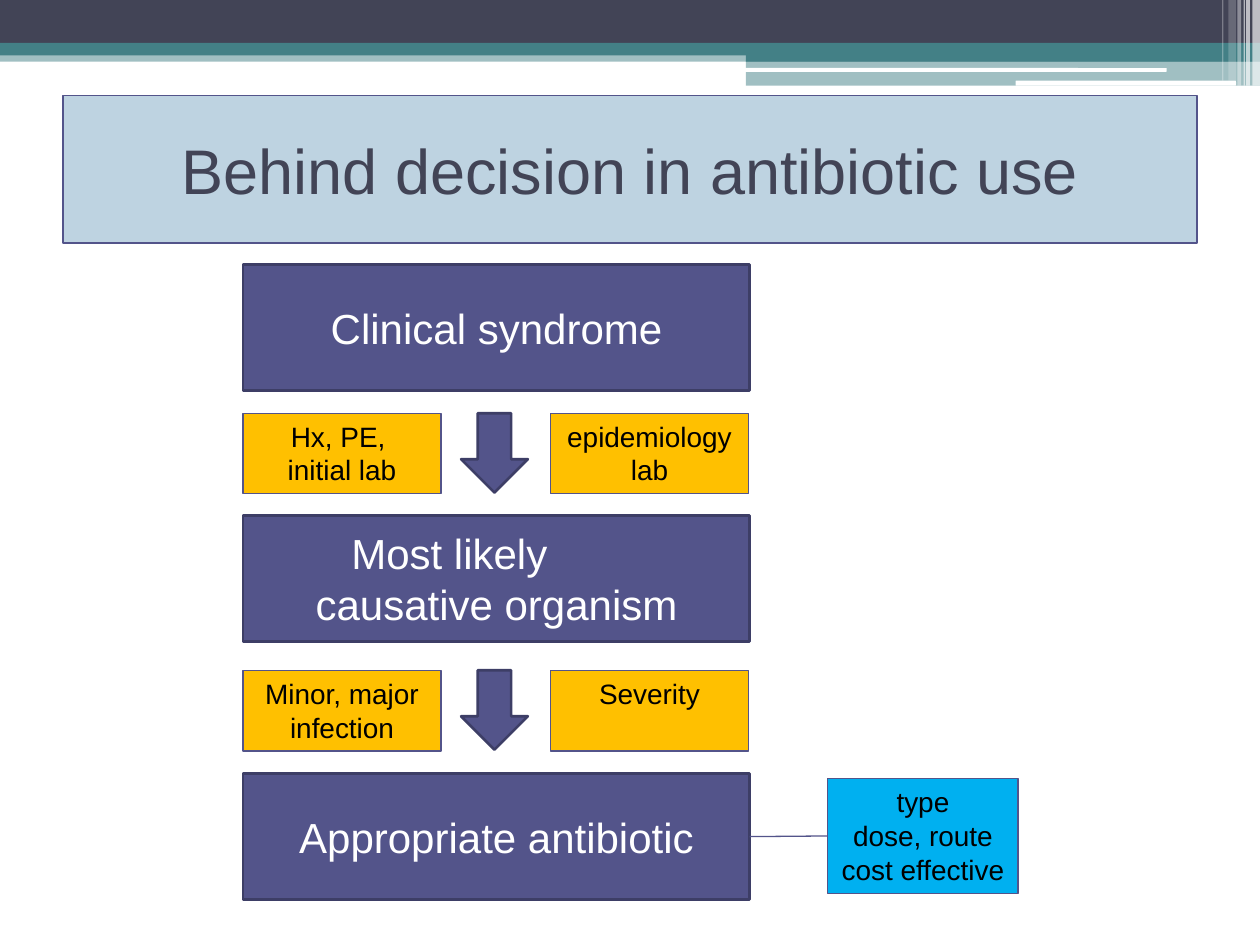
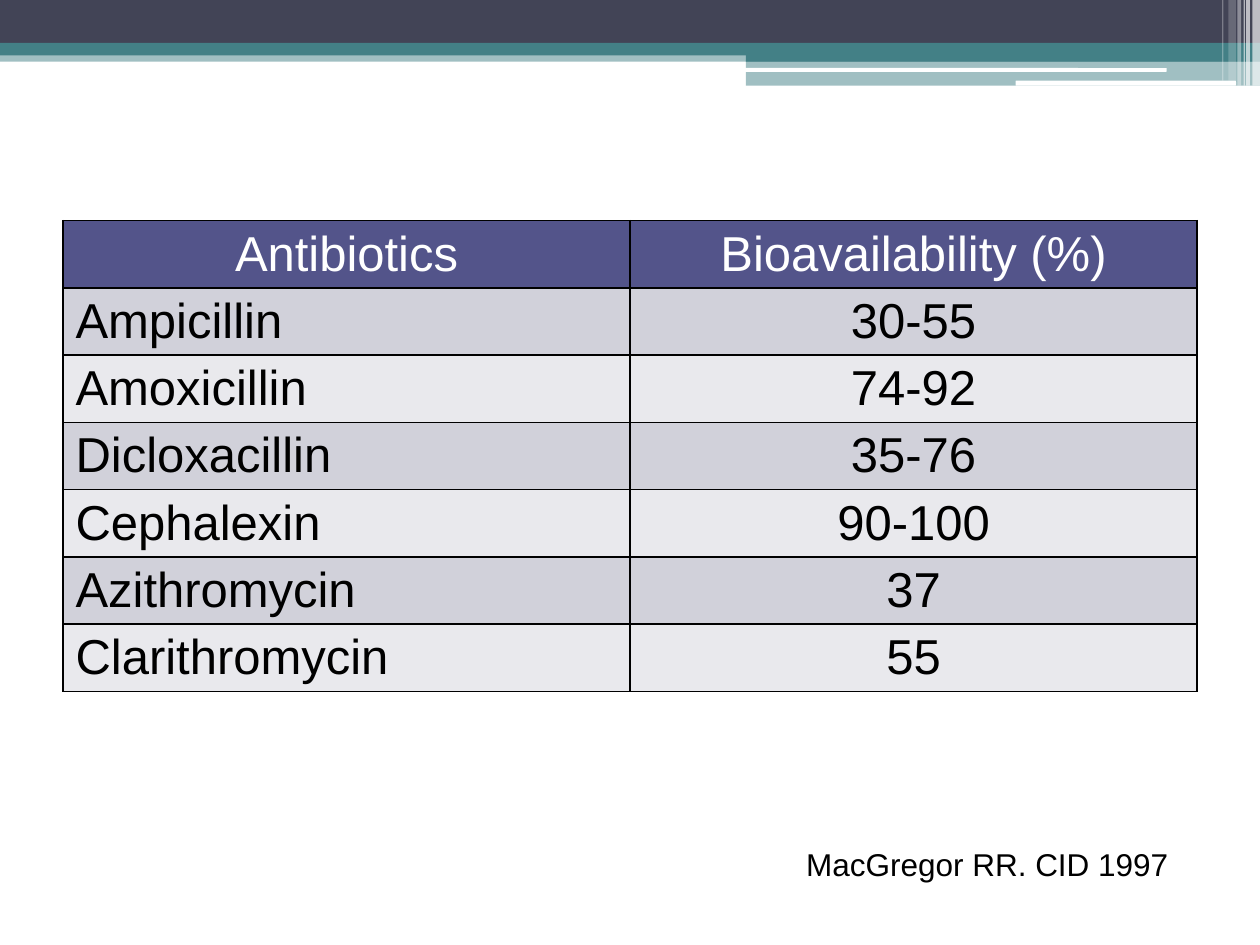
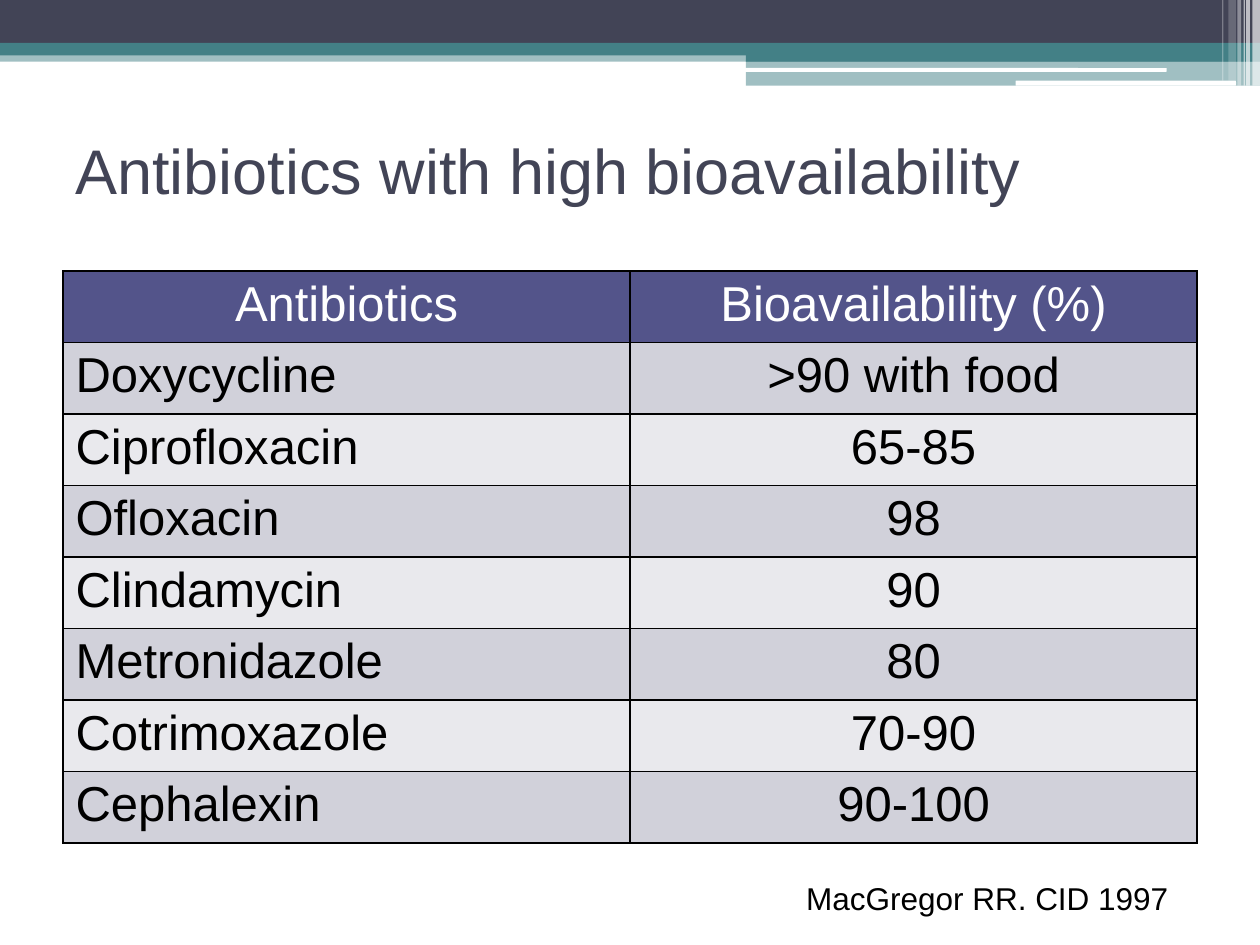
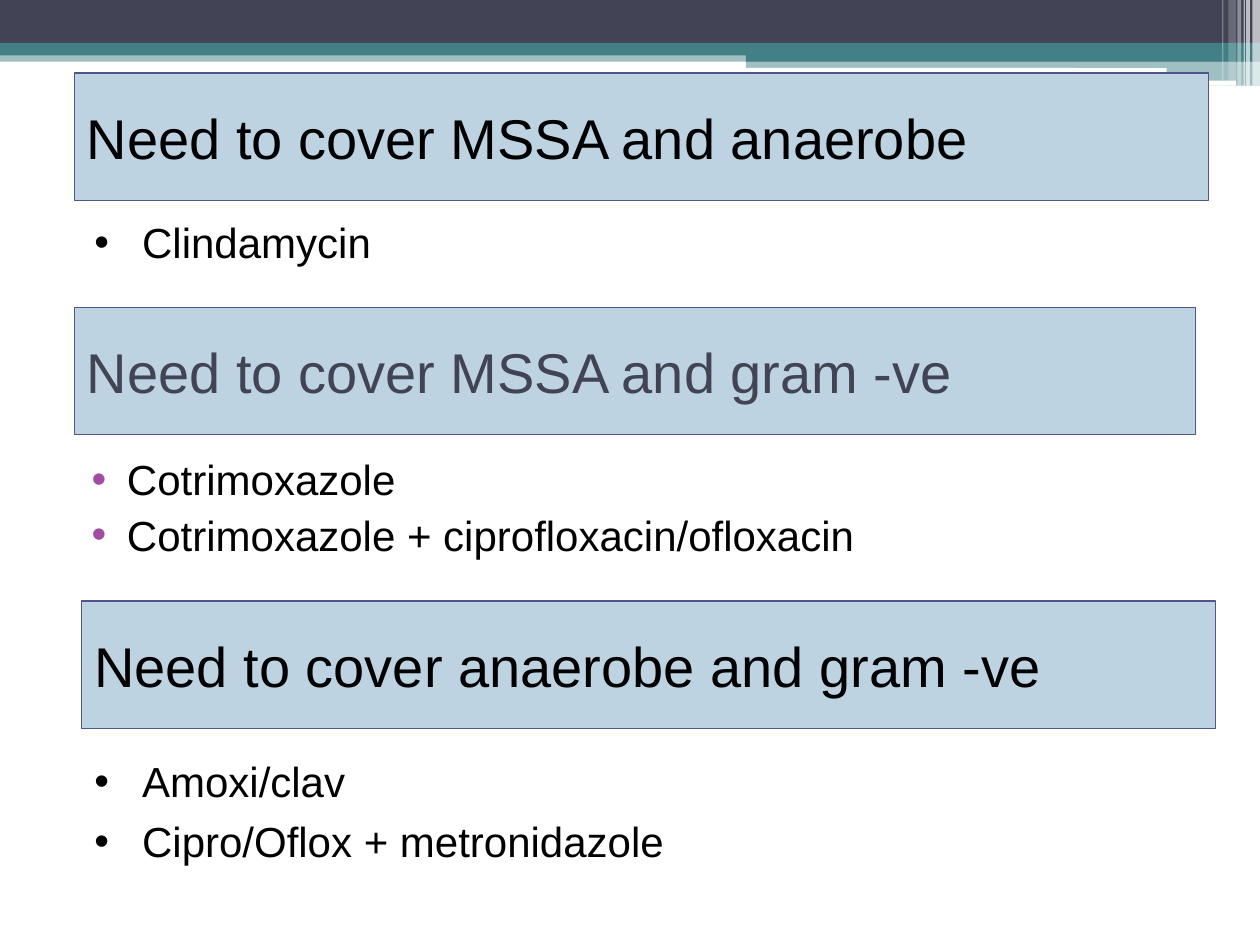
from dataclasses import dataclass

from lxml.etree import SubElement
from pptx import Presentation
from pptx.dml.color import RGBColor
from pptx.enum.shapes import MSO_CONNECTOR, MSO_SHAPE
from pptx.enum.text import MSO_ANCHOR, MSO_AUTO_SIZE, PP_ALIGN
from pptx.oxml.ns import qn
from pptx.util import Inches, Pt


@dataclass(frozen=True)
class Theme:
    font: str = "Arial"
    dark: str = "424456"
    teal: str = "438086"
    indigo: str = "53548A"
    indigo_edge: str = "3D3E66"
    panel: str = "BED3E1"
    amber: str = "FFC000"
    sky: str = "00B0F0"
    purple: str = "A04DA3"
    white: str = "FFFFFF"
    black: str = "000000"
    row_fills: tuple = ("D1D1DA", "E9E9ED")
    title: int = 36
    heading: int = 32
    table: int = 28
    body: int = 24
    source: int = 18
    note: int = 16


T = Theme()
RECT = MSO_SHAPE.RECTANGLE
ROUND = MSO_SHAPE.ROUNDED_RECTANGLE
LEFT, CENTER = PP_ALIGN.LEFT, PP_ALIGN.CENTER
TITLE_BOX = (0.5, 0.76, 9, 1.17)

BAND = [
    (RECT, (0, 0.4, 10, 0.09), T.teal, 50),
    (RECT, (0, 0, 10, 0.34), T.dark, 100),
    (RECT, (0, 0.34, 10, 0.1), T.teal, 100),
    (RECT, (5.92, 0.39, 4.08, 0.1), T.teal, 100),
    (RECT, (5.92, 0.48, 4.08, 0.2), T.teal, 50),
    (ROUND, (5.91, 0.54, 3.35, 0.03), T.white, 100),
    (ROUND, (8.06, 0.64, 1.75, 0.04), T.white, 100),
]
STRIPES = [
    (9.94, 0.06, 0.68, 65),
    (9.89, 0.03, 0.68, 65),
    (9.87, 0.01, 0.68, 60),
    (9.82, 0.03, 0.68, 40),
    (9.75, 0.06, 0.64, 20),
    (9.7, 0.01, 0.64, 30),
]


def rgb(color):
    return RGBColor.from_string(color)


def inches(box):
    return [Inches(v) for v in box]


def add_box(s, box, fill, line=None, width=0.75, kind=RECT, alpha=100):
    sp = s.shapes.add_shape(kind, *inches(box))
    sp.shadow.inherit = False
    sp.fill.solid()
    sp.fill.fore_color.rgb = rgb(fill)
    if alpha < 100:
        clr = sp.fill._xPr.find(qn("a:solidFill"))[0]
        SubElement(clr, qn("a:alpha"), val=str(alpha * 1000))
    if line:
        sp.line.color.rgb = rgb(line)
        sp.line.width = Pt(width)
    else:
        sp.line.fill.background()
    return sp


def write(tf, lines, size, color, align=LEFT, anchor=MSO_ANCHOR.TOP, wrap=True):
    tf.word_wrap = wrap
    tf.vertical_anchor = anchor
    if not wrap:
        tf.auto_size = MSO_AUTO_SIZE.SHAPE_TO_FIT_TEXT
    for i, line in enumerate(lines):
        p = tf.add_paragraph() if i else tf.paragraphs[0]
        write_line(p, line, size, color, align)


def write_line(p, line, size, color, align):
    p.alignment = align
    r = p.add_run()
    r.text = line
    r.font.name = T.font
    r.font.size = Pt(size)
    r.font.color.rgb = rgb(color)


def add_text(s, box, lines, size, color, **style):
    sp = s.shapes.add_textbox(*inches(box))
    write(sp.text_frame, lines, size, color, **style)
    return sp


def add_panel(s, box, text, size, color, align=LEFT):
    sp = add_box(s, box, T.panel, T.indigo)
    write(sp.text_frame, [text], size, color, align, MSO_ANCHOR.MIDDLE)


def add_step(s, top, lines):
    sp = add_box(s, (1.93, top, 4.02, 1), T.indigo, T.indigo_edge, 1.5)
    write(sp.text_frame, lines, T.body, T.white, CENTER, MSO_ANCHOR.MIDDLE)
    return sp


def add_conditions(s, top, left_lines, right_lines):
    add_box(s, (3.66, top, 0.53, 0.63), T.indigo, T.indigo_edge, 1.5,
            MSO_SHAPE.DOWN_ARROW)
    for left, lines in ((1.93, left_lines), (4.37, right_lines)):
        sp = add_box(s, (left, top, 1.57, 0.64), T.amber, T.indigo)
        write(sp.text_frame, lines, T.note, T.black, CENTER)


def join(s, start, end):
    cx = s.shapes.add_connector(MSO_CONNECTOR.STRAIGHT, 0, 0, 0, 0)
    cx.begin_connect(start, 3)
    cx.end_connect(end, 1)
    cx.line.color.rgb = rgb(T.indigo)
    cx.line.width = Pt(0.75)
    SubElement(cx._element.spPr, qn("a:effectLst"))


def add_bullets(s, box, lines, margin=0.38, indent=-0.38, before=5.5, bullet=None):
    sp = add_text(s, box, lines, T.body, T.black)
    for p in sp.text_frame.paragraphs:
        p.space_before = Pt(before)
        pPr = p._p.get_or_add_pPr()
        pPr.set("marL", str(Inches(margin)))
        pPr.set("indent", str(Inches(indent)))
        if bullet:
            clr = SubElement(pPr, qn("a:buClr"))
            SubElement(clr, qn("a:srgbClr"), val=bullet)
        SubElement(pPr, qn("a:buFont"), typeface=T.font)
        SubElement(pPr, qn("a:buChar"), char="•")


def set_borders(cell):
    tcPr = cell._tc.get_or_add_tcPr()
    for side in ("lnL", "lnR", "lnT", "lnB"):
        ln = SubElement(tcPr, qn(f"a:{side}"), w=str(Pt(1)))
        fill = SubElement(ln, qn("a:solidFill"))
        SubElement(fill, qn("a:srgbClr"), val=T.black)


def add_bioavailability(s, top, drugs):
    rows = [("Antibiotics", "Bioavailability (%)"), *drugs]
    height = 0.53
    box = inches((0.5, top, 9, height * len(rows)))
    table = s.shapes.add_table(len(rows), 2, *box).table
    for i, row in enumerate(rows):
        table.rows[i].height = Inches(height)
        fill = T.row_fills[(i - 1) % 2] if i else T.indigo
        color = T.black if i else T.white
        for j, text in enumerate(row):
            cell = table.cell(i, j)
            set_borders(cell)
            cell.fill.solid()
            cell.fill.fore_color.rgb = rgb(fill)
            align = LEFT if i and j == 0 else CENTER
            write_line(cell.text_frame.paragraphs[0], text, T.table, color, align)


def add_source(s, top):
    add_text(s, (6.3, top, 3.11, 0.4), ["MacGregor RR. CID 1997"],
             T.source, T.black, wrap=False)


def new_slide(prs):
    s = prs.slides.add_slide(prs.slide_layouts[6])
    for kind, box, fill, alpha in BAND:
        add_box(s, box, fill, kind=kind, alpha=alpha)
    for left, width, height, alpha in STRIPES:
        add_box(s, (left, 0, width, height), T.white, alpha=alpha)
    return s


def decision_slide(prs):
    s = new_slide(prs)
    add_panel(s, TITLE_BOX, "Behind decision in antibiotic use",
              T.title, T.dark, CENTER)
    add_step(s, 2.1, ["Clinical syndrome"])
    add_conditions(s, 3.28, ["Hx, PE, ", "initial lab"], ["epidemiology", "lab"])
    organism = add_step(s, 4.09, ["Most likely", "causative organism"])
    first = organism.text_frame.paragraphs[0]
    first.alignment = LEFT
    first._p.get_or_add_pPr().set("marL", str(Inches(0.76)))
    add_conditions(s, 5.32, ["Minor, major infection"], ["Severity"])
    antibiotic = add_step(s, 6.14, ["Appropriate antibiotic"])
    details = add_box(s, (6.57, 6.18, 1.51, 0.91), T.sky, T.indigo)
    write(details.text_frame, ["type", "dose, route", "cost effective"],
          T.note, T.black, CENTER, wrap=False)
    join(s, antibiotic, details)


def oral_slide(prs):
    s = new_slide(prs)
    add_bioavailability(s, 1.75, [
        ("Ampicillin", "30-55"),
        ("Amoxicillin", "74-92"),
        ("Dicloxacillin", "35-76"),
        ("Cephalexin", "90-100"),
        ("Azithromycin", "37"),
        ("Clarithromycin", "55"),
    ])
    add_source(s, 6.66)


def high_slide(prs):
    s = new_slide(prs)
    add_text(s, TITLE_BOX, ["Antibiotics with high bioavailability"],
             T.title, T.dark, anchor=MSO_ANCHOR.MIDDLE)
    add_bioavailability(s, 2.15, [
        ("Doxycycline", ">90 with food"),
        ("Ciprofloxacin", "65-85"),
        ("Ofloxacin", "98"),
        ("Clindamycin", "90"),
        ("Metronidazole", "80"),
        ("Cotrimoxazole", "70-90"),
        ("Cephalexin", "90-100"),
    ])
    add_source(s, 6.93)


def coverage_slide(prs):
    s = new_slide(prs)
    add_panel(s, (0.59, 2.44, 8.9, 1.01), "Need to cover MSSA and gram -ve",
              T.heading, T.dark)
    add_bullets(s, (0.51, 3.55, 9, 1.94),
                ["Cotrimoxazole", "Cotrimoxazole + ciprofloxacin/ofloxacin"],
                0.4, -0.28, 3, T.purple)
    add_panel(s, (0.59, 0.58, 9, 1.01), "Need to cover MSSA and anaerobe",
              T.heading, T.black)
    add_bullets(s, (0.65, 1.67, 9, 0.74), ["Clindamycin"])
    add_panel(s, (0.65, 4.77, 9, 1.01), "Need to cover anaerobe and gram -ve",
              T.heading, T.black)
    add_bullets(s, (0.65, 5.95, 9, 1.23),
                ["Amoxi/clav", "Cipro/Oflox + metronidazole"])


def main():
    prs = Presentation()
    prs.slide_width = Inches(10)
    prs.slide_height = Inches(7.5)
    decision_slide(prs)
    oral_slide(prs)
    high_slide(prs)
    coverage_slide(prs)
    prs.save("out.pptx")


if __name__ == "__main__":
    main()
